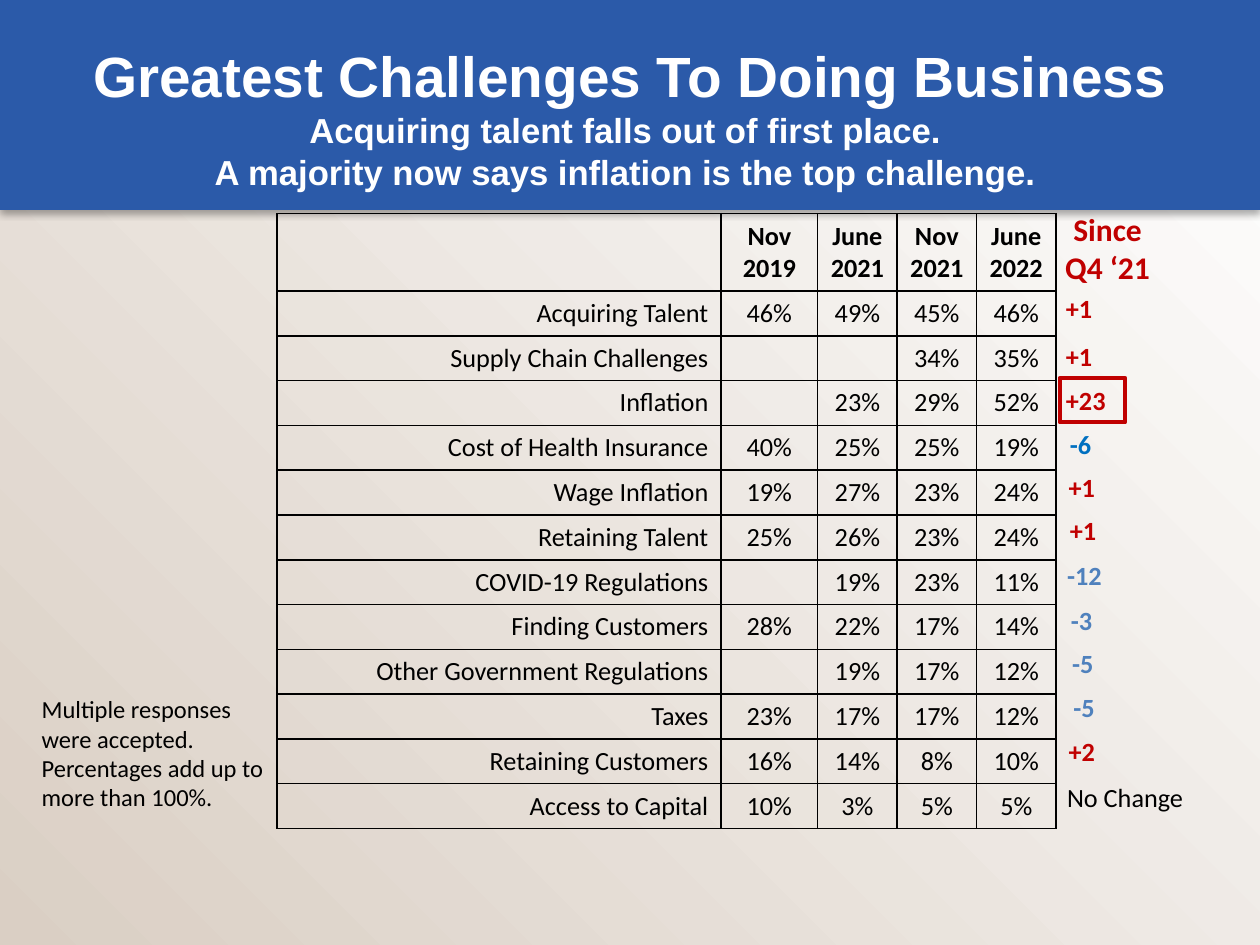
"""Build a slide that tabulates the greatest challenges to doing business."""
from lxml import etree
from pptx import Presentation
from pptx.dml.color import RGBColor
from pptx.enum.shapes import MSO_SHAPE
from pptx.enum.text import MSO_ANCHOR, MSO_AUTO_SIZE, PP_ALIGN
from pptx.oxml import parse_xml
from pptx.oxml.ns import nsdecls, qn
from pptx.util import Pt

LEFT, CENTER, RIGHT = PP_ALIGN.LEFT, PP_ALIGN.CENTER, PP_ALIGN.RIGHT
MIDDLE, TOP = MSO_ANCHOR.MIDDLE, MSO_ANCHOR.TOP
FIT_SHAPE, NO_FIT = MSO_AUTO_SIZE.SHAPE_TO_FIT_TEXT, MSO_AUTO_SIZE.NONE
RECTANGLE = MSO_SHAPE.RECTANGLE

COLORS = {
    "sand": "DACFC4", "white": "FFFFFF", "band": "2B5AA9", "black": "000000",
    "rise": "C00000", "fall": "4F81BD", "strong_fall": "0070C0",
}
WIDTH, HEIGHT, BAND_HEIGHT = 720, 540, 120

TITLE = "Greatest Challenges To Doing Business"
SUBTITLES = [
    "Acquiring talent falls out of first place. ",
    "A majority now says inflation is the top challenge. ",
]
HEADER = ["", "Nov 2019", "June 2021", "Nov\n2021", "June\n2022"]
ROWS = [
    ("Acquiring Talent", "46%", "49%", "45%", "46%"),
    ("Supply Chain Challenges", "", "", "34%", "35%"),
    ("Inflation", "", "23%", "29%", "52%"),
    ("Cost of Health Insurance", "40%", "25%", "25%", "19%"),
    ("Wage Inflation", "19%", "27%", "23%", "24%"),
    ("Retaining Talent", "25%", "26%", "23%", "24%"),
    ("COVID-19 Regulations", "", "19%", "23%", "11%"),
    ("Finding Customers", "28%", "22%", "17%", "14%"),
    ("Other Government Regulations", "", "19%", "17%", "12%"),
    ("Taxes", "23%", "17%", "17%", "12%"),
    ("Retaining Customers", "16%", "14%", "8%", "10%"),
    ("Access to Capital", "10%", "3%", "5%", "5%"),
]
# text, left, top, width, color
CHANGES = [
    ("+1", 605.5, 163.4, 30, "rise"),
    ("+1", 605.5, 190.8, 30, "rise"),
    ("+23", 605.5, 216, 37.5, "rise"),
    ("-6", 607.7, 241.2, 37.5, "strong_fall"),
    ("+1", 607, 265.7, 37.5, "rise"),
    ("+1", 607.7, 290.2, 38, "rise"),
    ("-12", 606.2, 316.1, 30, "fall"),
    ("-3", 608.4, 342, 30, "fall"),
    ("-5", 609.1, 366.5, 30, "fall"),
    ("-5", 609.8, 391.7, 30, "fall"),
    ("+2", 607, 416.9, 30, "rise"),
    ("No Change", 606.2, 442.8, 78, "black"),
]
CHANGE_HEIGHT = 25.4
HIGHLIGHT = "+23"
NOTE = "Multiple responses were accepted. Percentages add up to more than 100%."
SINCE = "Since Q4 ‘21"

TABLE_LEFT, TABLE_TOP = 158.4, 122
COLUMN_WIDTHS = [253.6, 55.3, 45.4, 45.4, 45.4]
HEADER_HEIGHT, ROW_HEIGHT = 44.3, 25.6


def rgb(name):
    return RGBColor.from_string(COLORS[name])


def set_font(target, size, color, bold=False, name="Calibri"):
    values = {"size": Pt(size), "bold": bold, "name": name}
    for attribute, value in values.items():
        setattr(target.font, attribute, value)
    target.font.color.rgb = rgb(color)


def set_frame(frame, fit=FIT_SHAPE, anchor=TOP):
    values = {"word_wrap": True, "auto_size": fit, "vertical_anchor": anchor}
    for side in ("left", "top", "right", "bottom"):
        values[f"margin_{side}"] = Pt(3.6)
    for attribute, value in values.items():
        setattr(frame, attribute, value)


def write(frame, text, size, color, bold=False, alignment=LEFT):
    frame.text = text
    for paragraph in frame.paragraphs:
        paragraph.alignment = alignment
        for run in paragraph.runs:
            set_font(run, size, color, bold)


def add_backdrop(slide):
    ground = slide.shapes.add_shape(RECTANGLE, 0, 0, Pt(WIDTH), Pt(HEIGHT))
    ground.fill.gradient()
    ground.fill.gradient_angle = 45
    for stop, color in zip(ground.fill.gradient_stops, ("sand", "white")):
        stop.color.rgb = rgb(color)
    band = slide.shapes.add_shape(RECTANGLE, 0, 0, Pt(WIDTH), Pt(BAND_HEIGHT))
    band.fill.solid()
    band.fill.fore_color.rgb = rgb("band")
    for position, shape in enumerate((ground, band), start=2):
        shape.line.fill.background()
        shape.shadow.inherit = False
        slide.shapes.element.insert(position, shape.element)
    effects = band.element.spPr.find(qn("a:effectLst"))
    effects.append(parse_xml(
        f'<a:outerShdw {nsdecls("a")} blurRad="{Pt(4)}" dist="{Pt(2.2)}" dir="5400000" '
        f'rotWithShape="0"><a:srgbClr val="{COLORS["black"]}"><a:alpha val="32000"/>'
        '</a:srgbClr></a:outerShdw>'))


def fill_title(title):
    title.left, title.top, title.width, title.height = Pt(36), Pt(21.6), Pt(648), Pt(90)
    set_frame(title.text_frame, NO_FIT, MIDDLE)
    paragraph = title.text_frame.paragraphs[0]
    paragraph.alignment = CENTER
    for index, text in enumerate([TITLE, *SUBTITLES]):
        if index:
            paragraph.add_line_break()
        run = paragraph.add_run()
        run.text = text
        set_font(run, 19.8 if index else 32.4, "white", True, "Arial")


def add_borders(cell):
    properties = cell._tc.get_or_add_tcPr()
    for position, side in enumerate(("lnL", "lnR", "lnT", "lnB")):
        line = etree.Element(qn(f"a:{side}"), w=str(Pt(1)))
        fill = etree.SubElement(line, qn("a:solidFill"))
        etree.SubElement(fill, qn("a:srgbClr"), val=COLORS["black"])
        properties.insert(position, line)


def add_challenges(slide):
    height = HEADER_HEIGHT + ROW_HEIGHT * len(ROWS)
    table = slide.shapes.add_table(
        len(ROWS) + 1, len(HEADER), Pt(TABLE_LEFT), Pt(TABLE_TOP),
        Pt(sum(COLUMN_WIDTHS)), Pt(height)).table
    table.horz_banding = False
    for column, width in zip(table.columns, COLUMN_WIDTHS):
        column.width = Pt(width)
    for row_index, values in enumerate([HEADER, *ROWS]):
        table.rows[row_index].height = Pt(ROW_HEIGHT if row_index else HEADER_HEIGHT)
        for column_index, text in enumerate(values):
            cell = table.cell(row_index, column_index)
            cell.fill.background()
            cell.vertical_anchor = MIDDLE
            cell.margin_left = cell.margin_right = Pt(3.6 if column_index else 7.2)
            write(cell.text_frame, text, 15, "black", row_index == 0,
                  CENTER if column_index else RIGHT)
            if not text:
                set_font(cell.text_frame.paragraphs[0], 15, "black")
            add_borders(cell)


def add_label(slide, text, box, size, color, bold=False, alignment=LEFT):
    shape = slide.shapes.add_textbox(*map(Pt, box))
    set_frame(shape.text_frame)
    write(shape.text_frame, text, size, color, bold, alignment)
    return shape


def main():
    presentation = Presentation()
    presentation.slide_width, presentation.slide_height = Pt(WIDTH), Pt(HEIGHT)
    slide = presentation.slides.add_slide(presentation.slide_layouts[5])
    add_backdrop(slide)
    fill_title(slide.shapes.title)
    add_challenges(slide)
    add_label(slide, NOTE, (20.2, 393.1, 141, 75), 14, "black")
    add_label(slide, SINCE, (601.9, 116.6, 62, 51), 18, "rise", True, CENTER)
    for text, left, top, width, color in CHANGES:
        label = add_label(slide, text, (left, top, width, CHANGE_HEIGHT), 15, color,
                          color != "black")
        if text == HIGHLIGHT:
            label.line.color.rgb = rgb(color)
            label.line.width = Pt(2.25)
    presentation.save("out.pptx")


if __name__ == "__main__":
    main()
